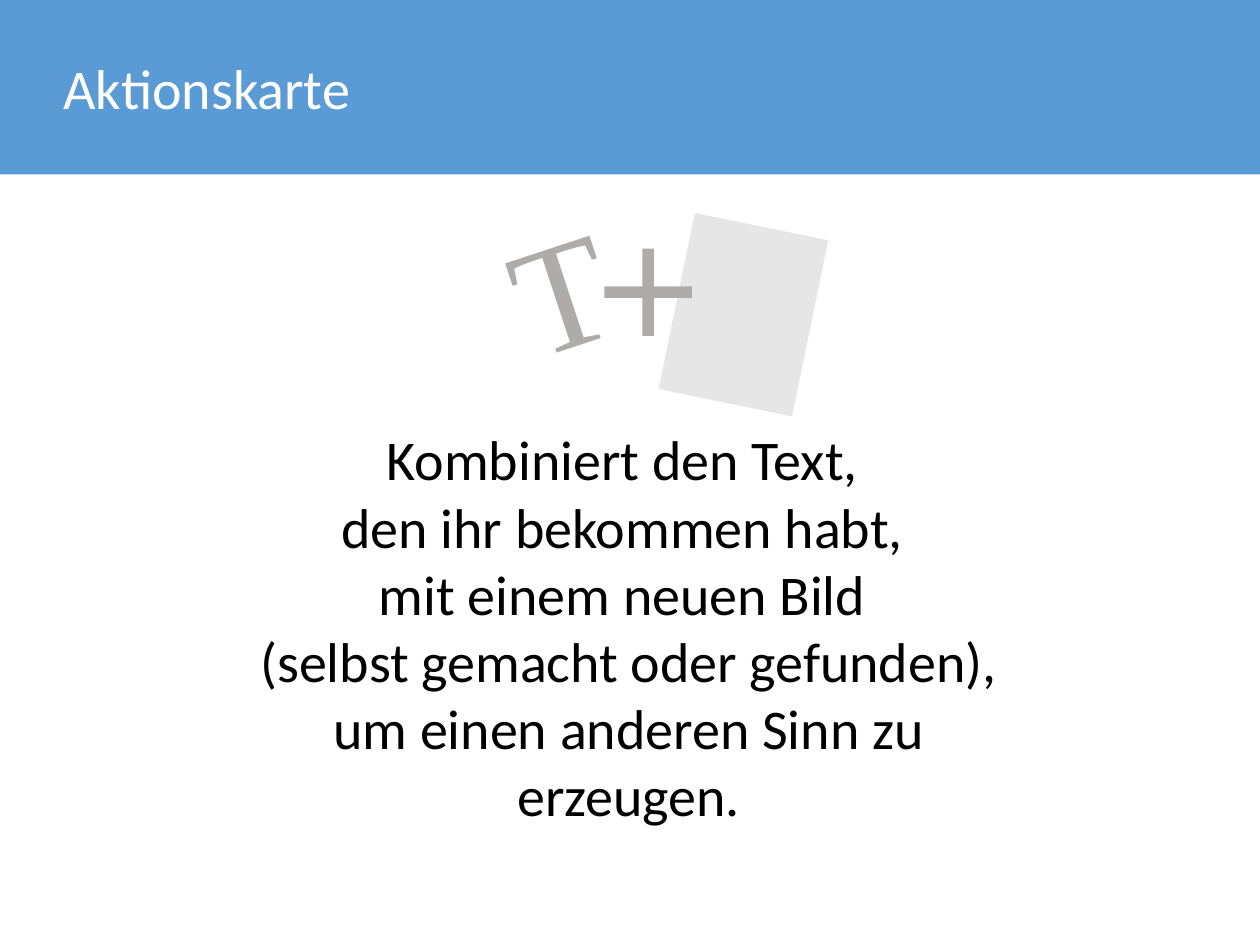
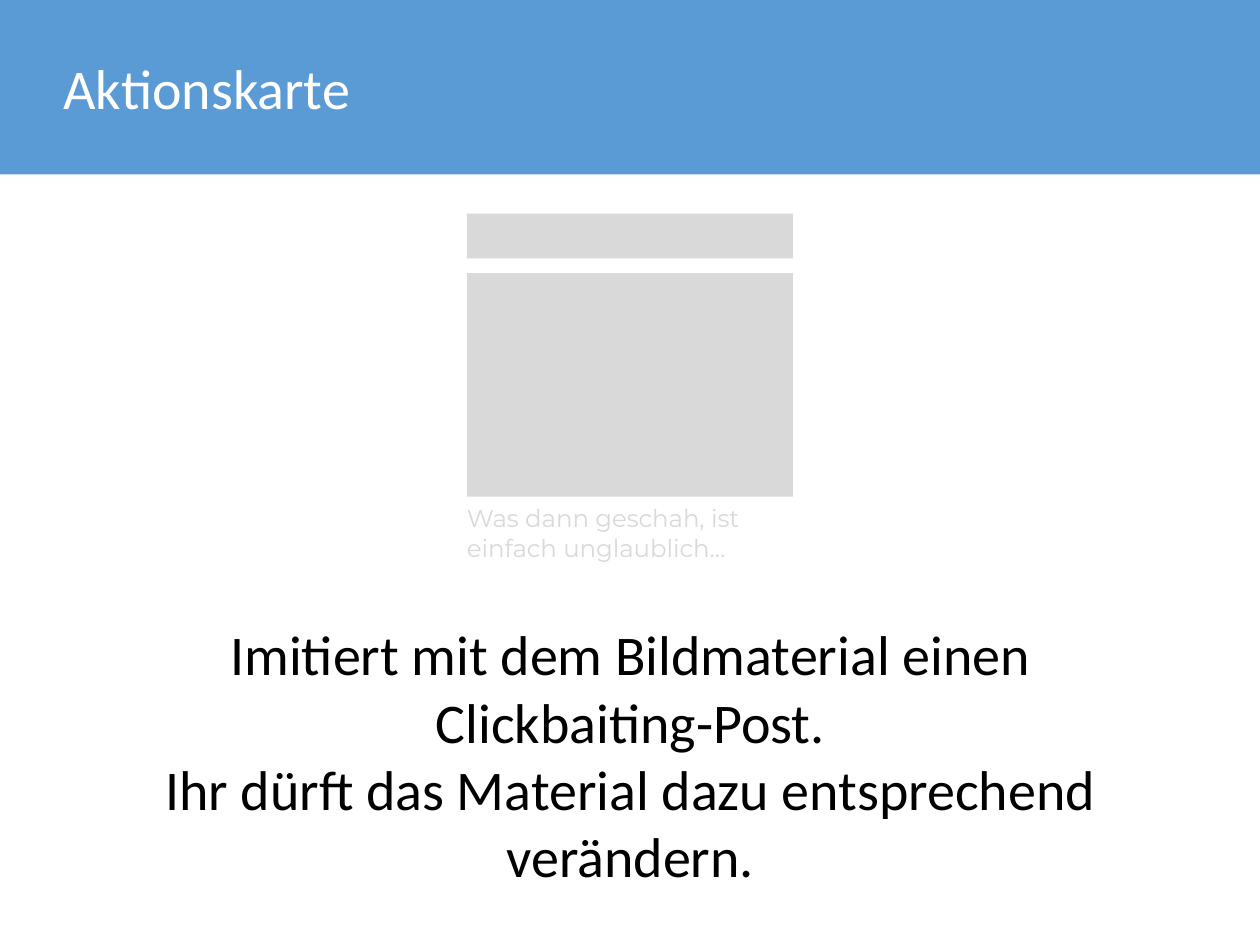
from copy import deepcopy

from pptx import Presentation
from pptx import util as u
from pptx.dml.color import RGBColor
from pptx.enum import shapes, text
from pptx.oxml.ns import qn

BLUE, WHITE, BLACK = "5B9BD5", "FFFFFF", "000000"
PALE_GREY, MID_GREY, DARK_GREY = "E7E6E6", "D9D9D9", "AFABAB"
RECTANGLE, CROSS = shapes.MSO_SHAPE.RECTANGLE, shapes.MSO_SHAPE.CROSS
LEFT, CENTER = text.PP_ALIGN.LEFT, text.PP_ALIGN.CENTER

TITLE = {"name": "Calibri", "size": u.Pt(24), "color": WHITE}
BODY = {**TITLE, "color": BLACK}
LETTER = {"name": "Times New Roman", "size": u.Pt(66), "color": DARK_GREY}
CAPTION = {"name": "Montserrat", "size": u.Pt(10.5), "color": MID_GREY}


def add_block(slide, box, color, kind=RECTANGLE, rotation=0):
    """Add a plain filled shape; box is left, top, width, height in cm."""
    shape = slide.shapes.add_shape(kind, *map(u.Cm, box))
    shape.shadow.inherit = False
    shape.fill.solid()
    shape.fill.fore_color.rgb = RGBColor.from_string(color)
    shape.line.fill.background()
    shape.rotation = rotation
    return shape


def add_text(slide, box, paragraphs, style, alignment=CENTER, rotation=0):
    """Add a text box; a vertical tab in a paragraph is a line break."""
    shape = slide.shapes.add_textbox(*map(u.Cm, box))
    shape.rotation = rotation
    frame = shape.text_frame
    frame.word_wrap = True
    frame.text = "\n".join(paragraphs)
    for paragraph in frame.paragraphs:
        paragraph.alignment = alignment
        for run in paragraph.runs:
            for key, value in style.items():
                if key == "color":
                    run.font.color.rgb = RGBColor.from_string(value)
                else:
                    setattr(run.font, key, value)
        # Line breaks carry the text size too, so that they keep the line height
        for line_break in paragraph._p.findall(qn("a:br")):
            line_break.append(deepcopy(paragraph.runs[0].font._element))


presentation = Presentation()
presentation.slide_width, presentation.slide_height = u.Cm(19.05), u.Cm(14.29)

# Both cards share the band and the title
cards = []
for number in range(2):
    slide = presentation.slides.add_slide(presentation.slide_layouts[6])
    add_block(slide, (0, 0, 19.05, 2.64), BLUE)
    add_text(slide, (0.71, 0.69, 5.49, 1.28), ["Aktionskarte"], TITLE, LEFT)
    cards.append(slide)
combine_card, clickbait_card = cards

# Card 1: text plus image
add_text(combine_card, (3.28, 6.3, 12.45, 6.4), [
    "Kombiniert den Text, \vden ihr bekommen habt, \vmit einem neuen Bild \v"
    "(selbst gemacht oder gefunden), um einen anderen Sinn zu erzeugen."], BODY)
add_block(combine_card, (10.21, 3.4, 2.06, 2.72), PALE_GREY, rotation=11.6)
plus = add_block(combine_card, (9.14, 3.76, 1.32, 1.32), DARK_GREY, CROSS)
plus.adjustments[0] = 0.434
add_text(combine_card, (6.91, 2.82, 3.12, 3.07), ["T"], LETTER, rotation=341.8)

# Card 2: sketch of a post with header, image and caption
add_text(clickbait_card, (1.07, 9.25, 16.92, 4.37), [
    "Imitiert mit dem Bildmaterial einen Clickbaiting-Post.",
    "Ihr dürft das Material dazu entsprechend verändern."], BODY)
for top, height in ((3.23, 0.68), (4.13, 3.38)):
    add_block(clickbait_card, (7.06, top, 4.93, height), MID_GREY)
add_text(clickbait_card, (6.81, 7.49, 11.81, 1.14),
         ["Was dann geschah, ist \veinfach unglaublich…"], CAPTION, LEFT)

presentation.save("out.pptx")
